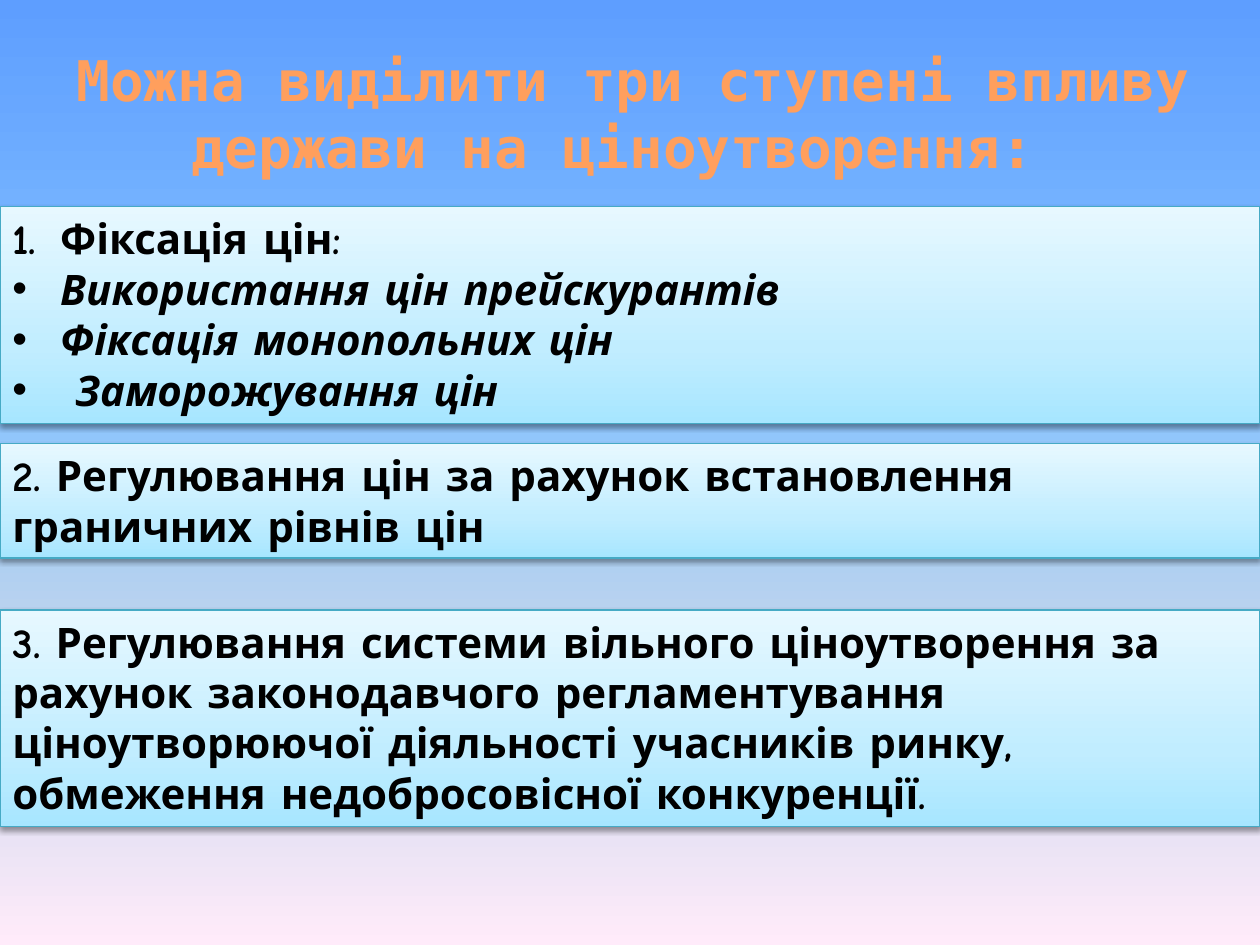
from lxml.etree import SubElement
from pptx import Presentation
from pptx.dml.color import RGBColor
from pptx.enum.shapes import MSO_SHAPE
from pptx.enum.text import MSO_ANCHOR, MSO_AUTO_SIZE, PP_ALIGN
from pptx.oxml.ns import qn
from pptx.util import Emu, Inches, Pt

SKY = [(0, "5E9EFF"), (40, "85C2FF"), (70, "C4D6EB"), (100, "FFEBFA")]
ORANGE = [(0, "FFA367"), (25, "FF9F5D"), (50, "F38E3A"), (75, "FF9F5D"), (100, "FFA367")]
PALE_BLUE = [(0, "A7E6FF"), (35, "C1EDFF"), (100, "E7F8FF")]

DEGREES = [
    (1.64, 1.72, [
        ("Фіксація цін:", "1.", False),
        ("Використання цін прейскурантів ", "•", True),
        ("Фіксація монопольних цін", "•", True),
        (" Заморожування цін", "•", True),
    ]),
    (3.52, 0.91, [
        ("2. Регулювання цін за рахунок встановлення граничних рівнів цін", None, False),
    ]),
    (4.84, 1.72, [
        ("3. Регулювання системи вільного ціноутворення за рахунок законодавчого "
         "регламентування ціноутворюючої діяльності учасників ринку, обмеження "
         "недобросовісної конкуренції.", None, False),
    ]),
]


def color(hex_code):
    return RGBColor.from_string(hex_code)


def add_xml(parent, tag, **attributes):
    return SubElement(parent, qn(tag), {k: str(v) for k, v in attributes.items()})


def set_gradient(fill, owner, stops, angle):
    """Fill with any number of stops; angle is counter-clockwise in degrees."""
    fill.gradient()
    fill.gradient_angle = angle
    stop_list = next(owner.iter(qn("a:gsLst")))
    for stop in list(stop_list):
        stop_list.remove(stop)
    for percent, hex_code in stops:
        stop = add_xml(stop_list, "a:gs", pos=percent * 1000)
        add_xml(stop, "a:srgbClr", val=hex_code)


class SlideBuilder:
    title_font = "DejaVu Sans Mono"
    body_font = "Comic Neue"
    indent = Inches(0.38)

    def __init__(self, slide):
        self.slide = slide

    def background(self):
        background = self.slide.background
        set_gradient(background.fill, self.slide._element, SKY, 270)

    def title(self, parts, top, height):
        box = self.slide.shapes.add_textbox(0, Inches(top), Inches(10), Inches(height))
        box.text_frame.word_wrap = True
        box.text_frame.auto_size = MSO_AUTO_SIZE.SHAPE_TO_FIT_TEXT
        paragraph = box.text_frame.paragraphs[0]
        paragraph.alignment = PP_ALIGN.CENTER
        for text, font_name, size in parts:
            run = paragraph.add_run()
            run.text = text
            run.font.name, run.font.size, run.font.bold = font_name, Pt(size), True
            set_gradient(run.font.fill, run._r, ORANGE, 270)

    def panel(self, top, height, lines):
        panel = self.slide.shapes.add_shape(
            MSO_SHAPE.RECTANGLE, 0, Inches(top), Inches(10), Inches(height))
        set_gradient(panel.fill, panel._element, PALE_BLUE, 90)
        panel.line.color.rgb = color("46AAC5")
        panel.line.width = Pt(0.75)
        self.shadow(panel)
        frame = panel.text_frame
        frame.word_wrap = True
        frame.auto_size = MSO_AUTO_SIZE.SHAPE_TO_FIT_TEXT
        frame.vertical_anchor = MSO_ANCHOR.TOP
        frame.text = "\n".join(text for text, _, _ in lines)
        for paragraph, (_, marker, italic) in zip(frame.paragraphs, lines):
            paragraph.alignment = PP_ALIGN.LEFT
            if marker:
                self.bullet(paragraph, marker)
            font = paragraph.runs[0].font
            font.name, font.size = self.body_font, Pt(24)
            font.bold, font.italic = True, italic
            font.color.rgb = color("000000")

    def bullet(self, paragraph, marker):
        properties = paragraph._p.get_or_add_pPr()
        properties.set("marL", str(self.indent))
        properties.set("indent", str(-self.indent))
        if marker == "•":
            add_xml(properties, "a:buFont", typeface="Arial")
            add_xml(properties, "a:buChar", char=marker)
        else:
            add_xml(properties, "a:buAutoNum", type="arabicPeriod")

    def shadow(self, shape):
        shape.shadow.inherit = False
        effects = shape._element.spPr.find(qn("a:effectLst"))
        outer = add_xml(effects, "a:outerShdw", blurRad=Emu(Pt(3.1)), dist=Emu(Pt(1.6)),
                        dir=90 * 60000, rotWithShape=0)
        black = add_xml(outer, "a:srgbClr", val="000000")
        add_xml(black, "a:alpha", val=38000)


def main():
    deck = Presentation()
    deck.slide_width, deck.slide_height = Inches(10), Inches(7.5)
    builder = SlideBuilder(deck.slides.add_slide(deck.slide_layouts[6]))
    builder.background()
    builder.title([
        (" ", "Calibri", 18),
        ("Можна виділити три ступені впливу держави на ціноутворення: ",
         builder.title_font, 32),
    ], 0.31, 1.18)
    for top, height, lines in DEGREES:
        builder.panel(top, height, lines)
    deck.save("out.pptx")


if __name__ == "__main__":
    main()
